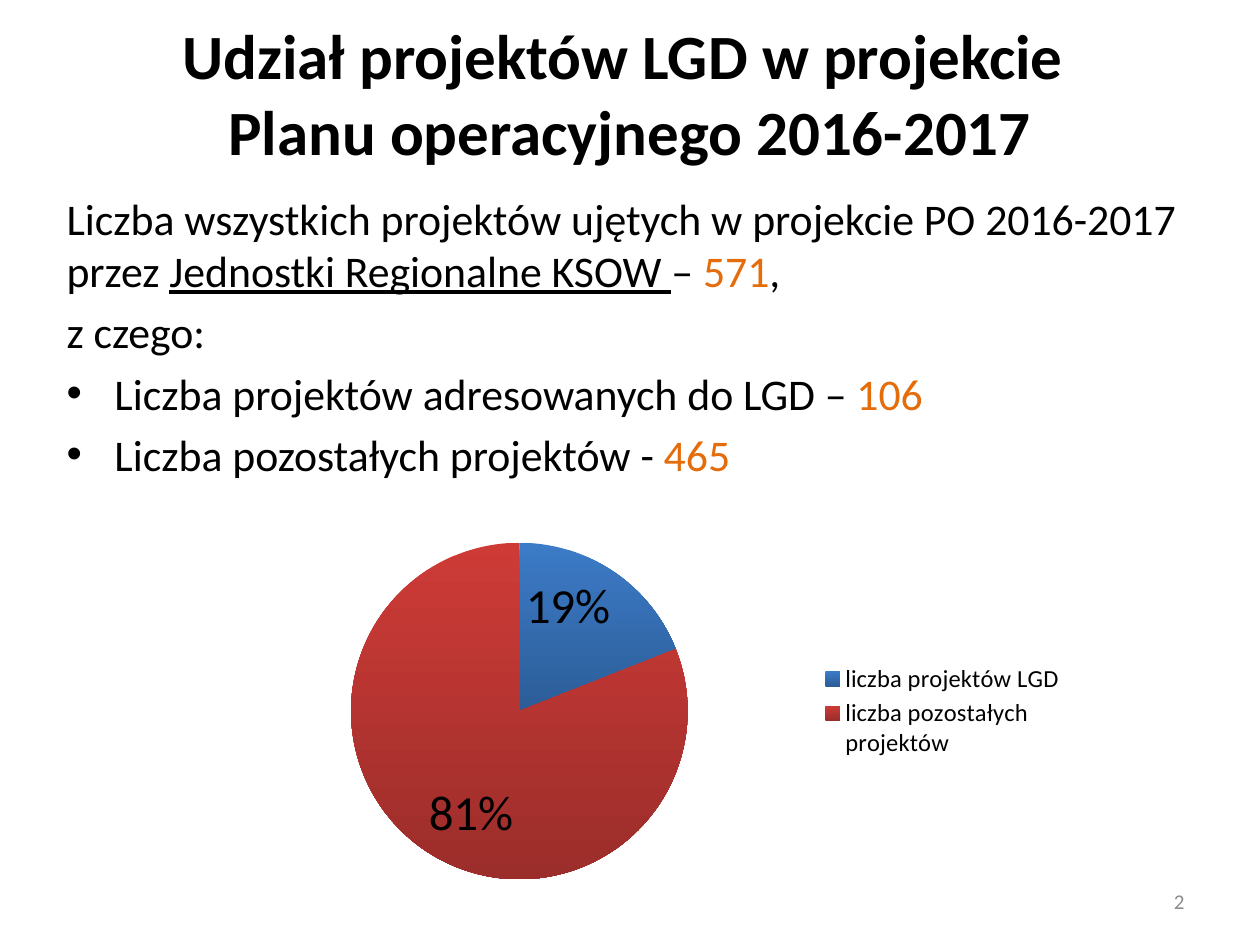
from dataclasses import dataclass

from lxml.etree import SubElement
from pptx import Presentation
from pptx.chart.data import CategoryChartData
from pptx.dml.color import RGBColor
from pptx.enum.chart import XL_CHART_TYPE, XL_LABEL_POSITION, XL_LEGEND_POSITION
from pptx.enum.text import MSO_ANCHOR, PP_ALIGN
from pptx.oxml import parse_xml
from pptx.oxml.ns import nsdecls, qn
from pptx.util import Inches, Pt


@dataclass(frozen=True)
class Theme:
    font: str = "Calibri"
    ink: str = "000000"
    accent: str = "E46C0A"
    muted: str = "8C8C8C"
    slices: tuple = (("3C7BC7", "2C5D98"), ("CE3B37", "9B2D2A"))
    title_size: int = 36
    body_size: int = 25
    label_size: int = 28
    legend_size: int = 14
    number_size: int = 12


def set_format(target, values):
    for name, value in values.items():
        setattr(target, name, value)


class SlideBuilder:
    def __init__(self, deck, theme):
        self.deck = deck
        self.theme = theme
        self.page = deck.slides.add_slide(deck.slide_layouts[6])

    def place(self, left, top, width, height):
        across, down = self.deck.slide_width, self.deck.slide_height
        return [int(share * side) for share, side in
                zip((left, top, width, height), (across, down, across, down))]

    def style(self, font, size, color, **values):
        set_format(font, {"name": self.theme.font, "size": Pt(size), **values})
        font.color.rgb = RGBColor.from_string(color)

    def text(self, area, paragraphs, size, anchor=MSO_ANCHOR.TOP, **para_format):
        frame = self.page.shapes.add_textbox(*self.place(*area)).text_frame
        set_format(frame, {"word_wrap": True, "vertical_anchor": anchor})
        for index, (spans, bullet) in enumerate(paragraphs):
            para = frame.add_paragraph() if index else frame.paragraphs[0]
            set_format(para, para_format)
            if bullet:
                self.bullet(para)
            for words, color, font_format in spans:
                for line, part in enumerate(words.split("\n")):
                    if line:
                        para.add_line_break()
                    span = para.add_run()
                    span.text = part
                    self.style(span.font, size, color, **font_format)

    def bullet(self, para):
        properties = para._p.get_or_add_pPr()
        indent = Inches(0.38)
        properties.set("marL", str(indent))
        properties.set("indent", str(-indent))
        SubElement(properties, qn("a:buFont")).set("typeface", "Arial")
        SubElement(properties, qn("a:buChar")).set("char", "•")

    def pie(self, area, shares, plot_area, legend_area):
        data = CategoryChartData()
        data.categories = list(shares)
        data.add_series("Udział projektów", list(shares.values()))
        chart = self.page.shapes.add_chart(
            XL_CHART_TYPE.PIE, *self.place(*area), data).chart
        set_format(chart, {"has_title": False, "has_legend": True})
        self.style(chart.font, self.theme.legend_size, self.theme.ink)
        set_format(chart.legend, {"position": XL_LEGEND_POSITION.RIGHT,
                                  "include_in_layout": False})
        plot = chart.plots[0]
        set_format(plot, {"vary_by_categories": True, "has_data_labels": True})
        labels = plot.data_labels
        set_format(labels, {"show_percentage": True, "show_value": False,
                            "number_format": "0%", "number_format_is_linked": False,
                            "position": XL_LABEL_POSITION.INSIDE_END})
        self.style(labels.font, self.theme.label_size, self.theme.ink)
        for index, colors in enumerate(self.theme.slices):
            fill = plot.series[0].points[index].format.fill
            fill.gradient()
            fill.gradient_angle = 270
            for stop, color in zip(fill.gradient_stops, colors):
                stop.color.rgb = RGBColor.from_string(color)
        self.arrange(chart._chartSpace.chart.plotArea, plot_area, inner=True)
        self.arrange(chart.legend._element, legend_area)

    def arrange(self, element, area, inner=False):
        for old in element.findall(qn("c:layout")):
            element.remove(old)
        target = '<c:layoutTarget val="inner"/>' if inner else ""
        modes = "".join(f'<c:{side}Mode val="edge"/>' for side in "xy")
        sizes = "".join(f'<c:{side} val="{share}"/>' for side, share in zip("xywh", area))
        layout = parse_xml(f'<c:layout {nsdecls("c")}><c:manualLayout>'
                           f'{target}{modes}{sizes}</c:manualLayout></c:layout>')
        position = element.find(qn("c:legendPos"))
        element.insert(0 if position is None else 1, layout)


def main():
    theme = Theme()
    deck = Presentation()
    set_format(deck, {"slide_width": Inches(10), "slide_height": Inches(7.5)})
    slide = SlideBuilder(deck, theme)

    def plain(words, **font_format):
        return words, theme.ink, font_format

    def figure(words):
        return words, theme.accent, {}

    title = "Udział projektów LGD w projekcie \nPlanu operacyjnego 2016-2017"
    slide.text((0, 0, 1, 0.196), [([plain(title, bold=True)], False)],
               theme.title_size, MSO_ANCHOR.MIDDLE, alignment=PP_ALIGN.CENTER)
    slide.text((0.043, 0.196, 0.921, 0.41), [
        ([plain("Liczba wszystkich projektów ujętych w projekcie PO 2016-2017 przez "),
          plain("Jednostki Regionalne KSOW ", underline=True),
          plain("– "), figure("571"), plain(",")], False),
        ([plain("z czego:")], False),
        ([plain("Liczba projektów adresowanych do LGD – "), figure("106")], True),
        ([plain("Liczba pozostałych projektów - "), figure("465")], True),
    ], theme.body_size, space_before=Pt(5))
    slide.pie((0.169, 0.505, 0.685, 0.495),
              {"liczba projektów LGD": 19, "liczba pozostałych projektów": 81},
              plot_area=(0.16, 0.14, 0.39, 0.72), legend_area=(0.7, 0.39, 0.29, 0.22))
    slide.text((0.717, 0.927, 0.233, 0.053), [([("2", theme.muted, {})], False)],
               theme.number_size, MSO_ANCHOR.MIDDLE, alignment=PP_ALIGN.RIGHT)
    deck.save("out.pptx")


if __name__ == "__main__":
    main()
